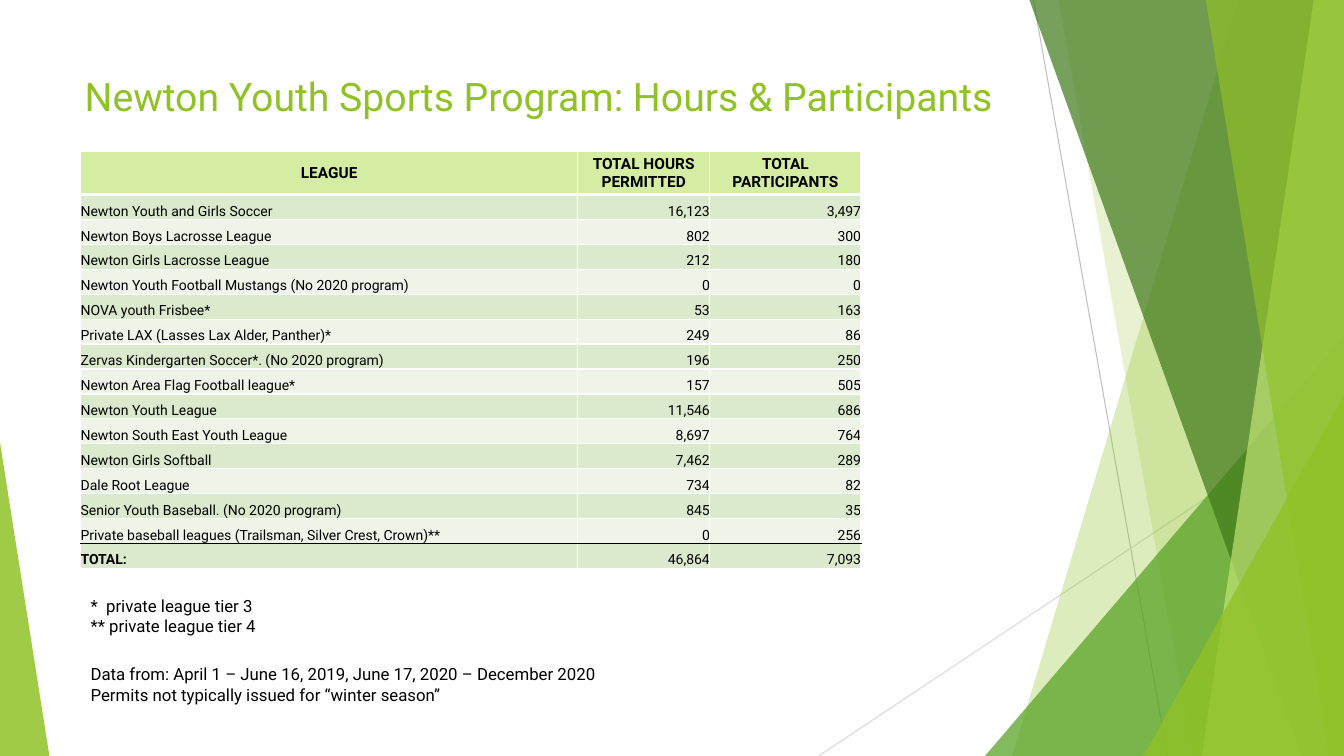
from dataclasses import dataclass

from lxml.etree import SubElement
from pptx import Presentation
from pptx.dml.color import RGBColor as RGB
from pptx.enum.shapes import MSO_CONNECTOR, MSO_SHAPE
from pptx.enum.text import MSO_ANCHOR as ANCHOR, PP_ALIGN as ALIGN
from pptx.oxml.ns import qn
from pptx.util import Inches, Pt


@dataclass(frozen=True)
class Theme:
    font: str = "Roboto"
    title_size: int = 28
    note_size: int = 12
    header_size: int = 11
    row_size: int = 10
    text: str = "000000"
    white: str = "FFFFFF"
    lime: str = "90C226"
    leaf: str = "54A021"
    forest: str = "3F7819"
    pale: str = "C0E474"
    header: str = "D5EDA2"
    odd_row: str = "DBE9CD"
    even_row: str = "EEF4E8"
    gray: str = "BFBFBF"
    light_gray: str = "D9D9D9"


theme = Theme()


def write(paragraph, text, size, color=theme.text, bold=False, align=ALIGN.LEFT):
    paragraph.text = text
    paragraph.alignment = align
    font = paragraph.font
    font.name, font.size, font.bold = theme.font, Pt(size), bold
    font.color.rgb = RGB.from_string(color)


def tint(shape, color, opacity):
    shape.shadow.inherit = False
    shape.line.fill.background()
    shape.fill.solid()
    shape.fill.fore_color.rgb = RGB.from_string(color)
    fill_color = shape.element.xpath("./p:spPr/a:solidFill/a:srgbClr")[0]
    SubElement(fill_color, qn("a:alpha"), val=str(opacity * 1000))


deck = Presentation()
deck.slide_width, deck.slide_height = Inches(13.33), Inches(7.5)
slide = deck.slides.add_slide(deck.slide_layouts[5])
shapes = slide.shapes

rays = [
    ((10.25, 0), (11.58, 7.5), theme.gray),
    ((13.33, 4.03), (8.12, 7.5), theme.light_gray),
]
for start, end, color in rays:
    ray = shapes.add_connector(
        MSO_CONNECTOR.STRAIGHT, *map(Inches, start), *map(Inches, end)
    )
    ray.line.color.rgb = RGB.from_string(color)
    ray.line.width = Pt(0.75)
    SubElement(ray.element.spPr, qn("a:effectLst"))

shards = [
    ("band", (12.28, 10.04), theme.lime, 30),
    ("band", (10.5, 11.83), theme.lime, 20),
    ("wedge", (9.77, 3.33, 3.56, 4.17, 1), theme.leaf, 72),
    ("band", (10.21, 12.91), theme.forest, 70),
    ("band", (13.03, 11.92), theme.pale, 70),
    ("band", (11.96, 13.18), theme.lime, 65),
    ("wedge", (11.34, 3.93, 1.99, 3.57, 1), theme.lime, 80),
    ("wedge", (0, 4.39, 0.49, 3.11, 0), theme.lime, 85),
]
for kind, geometry, color, opacity in shards:
    if kind == "band":
        top_x, bottom_x = geometry
        outline = shapes.build_freeform(Inches(top_x), 0)
        corners = [(13.33, 0), (13.33, 7.5), (bottom_x, 7.5)]
        outline.add_line_segments([(Inches(x), Inches(y)) for x, y in corners])
        shard = outline.convert_to_shape()
    else:
        *box, apex = geometry
        shard = shapes.add_shape(MSO_SHAPE.ISOSCELES_TRIANGLE, *map(Inches, box))
        shard.adjustments[0] = apex
    tint(shard, color, opacity)

title = shapes.title
title.left, title.top = Inches(0.74), Inches(0.65)
title.width, title.height = Inches(9.4), Inches(0.61)
title.text_frame.vertical_anchor = ANCHOR.MIDDLE
write(
    title.text_frame.paragraphs[0],
    "Newton Youth Sports Program: Hours & Participants",
    theme.title_size,
    theme.lime,
)

leagues = [
    ("LEAGUE", "TOTAL HOURS PERMITTED", "TOTAL PARTICIPANTS"),
    ("Newton Youth and Girls Soccer", "16,123", "3,497"),
    ("Newton Boys Lacrosse League", "802", "300"),
    ("Newton Girls Lacrosse League", "212", "180"),
    ("Newton Youth Football Mustangs (No 2020 program)", "0", "0"),
    ("NOVA youth Frisbee*", "53", "163"),
    ("Private LAX (Lasses Lax Alder, Panther)*", "249", "86"),
    ("Zervas Kindergarten Soccer*. (No 2020 program)", "196", "250"),
    ("Newton Area Flag Football league*", "157", "505"),
    ("Newton Youth League", "11,546", "686"),
    ("Newton South East Youth League", "8,697", "764"),
    ("Newton Girls Softball", "7,462", "289"),
    ("Dale Root League", "734", "82"),
    ("Senior Youth Baseball. (No 2020 program)", "845", "35"),
    ("Private baseball leagues (Trailsman, Silver Crest, Crown)**", "0", "256"),
    ("TOTAL:", "46,864", "7,093"),
]
total_row = len(leagues) - 1
header_height, table_height = 0.43, 4.14
table = shapes.add_table(
    len(leagues), 3, Inches(0.8), Inches(1.5), Inches(7.74), Inches(table_height)
).table
table.horz_banding = False
for column, width in zip(table.columns, (4.93, 1.31, 1.5)):
    column.width = Inches(width)
for r, league in enumerate(leagues):
    is_header = r == 0
    table.rows[r].height = Inches(
        header_height if is_header else (table_height - header_height) / total_row
    )
    row_fill = theme.header if is_header else (theme.even_row, theme.odd_row)[r % 2]
    edges = {
        "L": (theme.white, 1),
        "R": (theme.white, 1),
        "T": (theme.white, 3 if r == 1 else 1),
        "B": (theme.white, 3 if is_header else 1),
    }
    if r == total_row:
        edges["T"] = (theme.text, 1)
    if r == total_row - 1:
        edges["B"] = (theme.text, 1)
    for c, text in enumerate(league):
        cell = table.cell(r, c)
        cell.margin_left = cell.margin_right = cell.margin_top = cell.margin_bottom = 0
        cell.vertical_anchor = ANCHOR.MIDDLE if is_header else ANCHOR.BOTTOM
        properties = cell._tc.get_or_add_tcPr()
        for side, (color, width) in edges.items():
            edge = SubElement(properties, qn(f"a:ln{side}"), w=str(Pt(width)))
            SubElement(SubElement(edge, qn("a:solidFill")), qn("a:srgbClr"), val=color)
        cell.fill.solid()
        cell.fill.fore_color.rgb = RGB.from_string(row_fill)
        write(
            cell.text_frame.paragraphs[0],
            text,
            theme.header_size if is_header else theme.row_size,
            bold=is_header or (r == total_row and c == 0),
            align=ALIGN.CENTER if is_header else ALIGN.RIGHT if c else ALIGN.LEFT,
        )

notes = [
    ((0.8, 5.86, 1.91, 0.5), ("*  private league tier 3", "** private league tier 4")),
    (
        (0.8, 6.54, 5.24, 0.5),
        (
            "Data from: April 1 – June 16, 2019, June 17, 2020 – December 2020",
            "Permits not typically issued for “winter season”",
        ),
    ),
]
for box, (first_line, second_line) in notes:
    note = shapes.add_textbox(*map(Inches, box)).text_frame
    note.word_wrap = True
    write(note.paragraphs[0], first_line, theme.note_size)
    write(note.add_paragraph(), second_line, theme.note_size)

deck.save("out.pptx")
